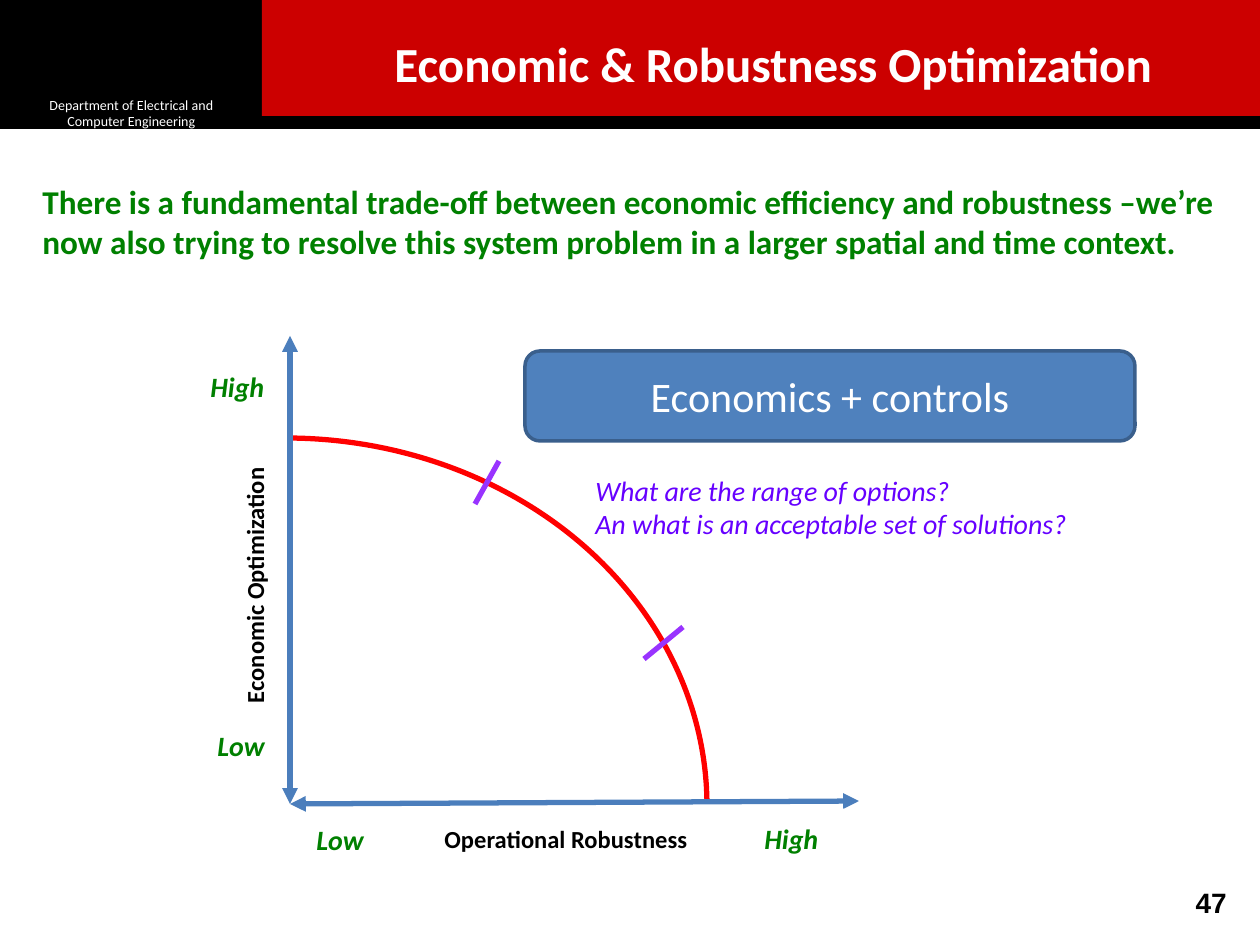
from dataclasses import dataclass

from lxml import etree
from pptx import Presentation
from pptx.dml.color import RGBColor
from pptx.enum.shapes import MSO_CONNECTOR, MSO_SHAPE
from pptx.enum.text import MSO_ANCHOR, MSO_AUTO_SIZE, PP_ALIGN
from pptx.oxml.ns import qn
from pptx.util import Pt

RECT, ROUNDED, ARC = MSO_SHAPE.RECTANGLE, MSO_SHAPE.ROUNDED_RECTANGLE, MSO_SHAPE.ARC
STRAIGHT = MSO_CONNECTOR.STRAIGHT
LEFT, CENTER, RIGHT = PP_ALIGN.LEFT, PP_ALIGN.CENTER, PP_ALIGN.RIGHT
TOP, MIDDLE = MSO_ANCHOR.TOP, MSO_ANCHOR.MIDDLE
GROW, FIXED = MSO_AUTO_SIZE.SHAPE_TO_FIT_TEXT, MSO_AUTO_SIZE.NONE

EMU_PER_PX = 914400 / 126


@dataclass(frozen=True)
class Theme:
    font: str = "Calibri"
    number_font: str = "Arial"
    black: str = "000000"
    white: str = "FFFFFF"
    red: str = "CC0000"
    curve: str = "FF0000"
    axis: str = "4B7EBC"
    green: str = "008000"
    tick: str = "9933FF"
    question: str = "6600FF"
    button: str = "4F81BD"
    button_edge: str = "3A5F8C"
    department_size: int = 8
    axis_size: int = 14
    label_size: int = 16
    lead_size: int = 19
    button_size: int = 24
    title_size: int = 28
    thin: int = 2
    thick: int = 3


def emu(*lengths):
    return [round(length * EMU_PER_PX) for length in lengths]


class SlideBuilder:
    def __init__(self, page, theme):
        self.page = page
        self.theme = theme

    def add_lines(self, frame, lines, size, color, bold=False, italic=False,
                  align=LEFT, anchor=TOP, font=None):
        frame.vertical_anchor = anchor
        for index, line in enumerate(lines):
            para = frame.paragraphs[0] if index == 0 else frame.add_paragraph()
            para.alignment = align
            span = para.add_run()
            span.text = line
            span.font.name = font or self.theme.font
            span.font.size = Pt(size)
            span.font.bold = bold
            span.font.italic = italic
            span.font.color.rgb = RGBColor.from_string(color)

    def text(self, at, *lines, wrap=False, fit=GROW, turn=0, **style):
        box = self.page.shapes.add_textbox(*emu(*at))
        box.rotation = turn
        box.text_frame.word_wrap = wrap
        box.text_frame.auto_size = fit
        self.add_lines(box.text_frame, lines, **style)

    def shape(self, kind, at, fill=None, line=None, width=0):
        shape = self.page.shapes.add_shape(kind, *emu(*at))
        shape.shadow.inherit = False
        if fill:
            shape.fill.solid()
            shape.fill.fore_color.rgb = RGBColor.from_string(fill)
        else:
            shape.fill.background()
        if line:
            shape.line.color.rgb = RGBColor.from_string(line)
            shape.line.width = Pt(width)
        else:
            shape.line.fill.background()
        return shape

    def line(self, start, end, color, arrows=False):
        line = self.page.shapes.add_connector(STRAIGHT, *emu(*start, *end))
        line.line.color.rgb = RGBColor.from_string(color)
        line.line.width = Pt(self.theme.thick)
        properties = line.element.spPr
        etree.SubElement(properties, qn("a:effectLst"))
        if arrows:
            outline = properties.find(qn("a:ln"))
            for tip in ("a:headEnd", "a:tailEnd"):
                etree.SubElement(outline, qn(tip), type="triangle")


def main():
    theme = Theme()
    deck = Presentation()
    deck.slide_width, deck.slide_height = emu(1260, 945)
    page = deck.slides.add_slide(deck.slide_layouts[6])
    slide = SlideBuilder(page, theme)

    # Header band
    slide.shape(RECT, (0, 1, 1260, 126), theme.black, theme.black, theme.thin)
    department = slide.shape(RECT, (21, 97, 221, 32), theme.black)
    slide.add_lines(department.text_frame,
                    ["Department of Electrical and Computer Engineering"],
                    theme.department_size, theme.white, align=CENTER, anchor=MIDDLE)
    slide.shape(RECT, (262, 0, 998, 116), theme.red)
    slide.text((286, 21, 974, 84), "Economic & Robustness Optimization",
               wrap=True, fit=FIXED, size=theme.title_size, color=theme.white,
               bold=True, align=CENTER, anchor=MIDDLE)

    # Page number
    slide.text((1115, 879, 124, 39), "47", wrap=True, fit=FIXED,
               size=theme.label_size, color=theme.black, bold=True,
               align=RIGHT, font=theme.number_font)

    # Trade-off curve: a quarter ellipse, angles in 1/60000 degree over 100000
    curve = slide.shape(ARC, (-135, 438, 842, 735), line=theme.curve,
                        width=theme.thick)
    curve.adjustments[0] = 162.49
    curve.adjustments[1] = 215.46

    # Axes, and ticks across the curve
    slide.line((290, 336), (290, 804), theme.axis, arrows=True)
    slide.line((859, 801), (290, 804), theme.axis, arrows=True)
    slide.line((683, 627), (644, 659), theme.tick)
    slide.line((499, 461), (475, 504), theme.tick)

    # Axis titles
    axis_style = dict(size=theme.axis_size, color=theme.black, bold=True)
    slide.text((105, 544, 300, 43), "Economic Optimization", turn=270, **axis_style)
    slide.text((432, 818, 310, 43), "Operational Robustness", **axis_style)

    # Axis ends
    for word, left, top, width in (("High", 198, 363, 88), ("Low", 205, 722, 82),
                                   ("High", 752, 815, 88), ("Low", 304, 816, 82)):
        slide.text((left, top, width, 46), word, size=theme.label_size,
                   color=theme.green, bold=True, italic=True)

    # Questions and lead statement
    slide.text((583, 467, 552, 81), "What are the range of options?",
               "An what is an acceptable set of solutions?",
               size=theme.label_size, color=theme.question, italic=True)
    slide.text((30, 175, 1201, 134),
               "There is a fundamental trade-off between economic efficiency and "
               "robustness –we’re now also trying to resolve this system problem "
               "in a larger spatial and time context.",
               wrap=True, size=theme.lead_size, color=theme.green, bold=True)

    # Button
    button = slide.shape(ROUNDED, (525, 351, 610, 90), theme.button,
                         theme.button_edge, theme.thin)
    slide.add_lines(button.text_frame, ["Economics + controls"], theme.button_size,
                    theme.white, align=CENTER, anchor=MIDDLE)

    deck.save("out.pptx")


if __name__ == "__main__":
    main()
